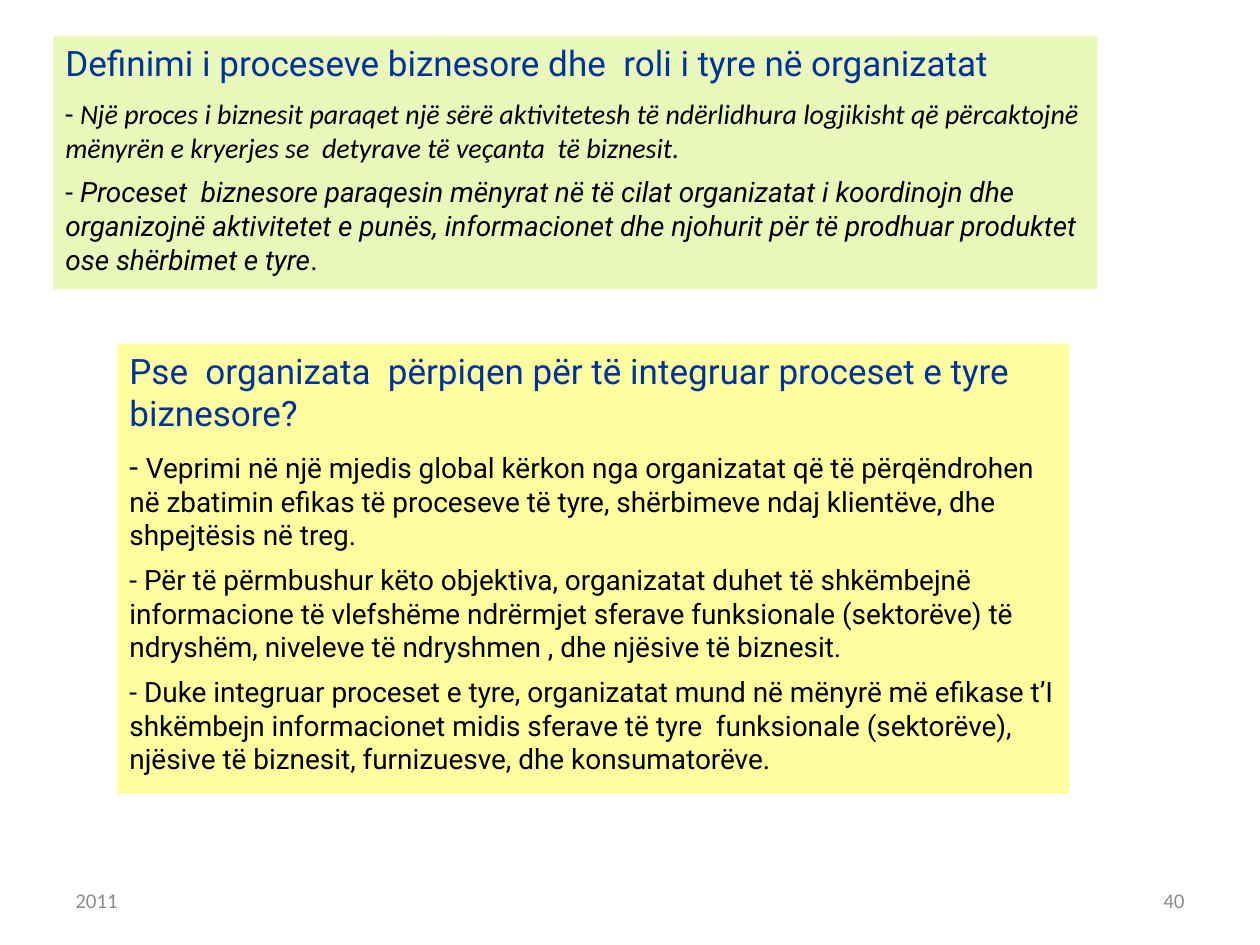
from pptx import Presentation
from pptx.dml.color import RGBColor
from pptx.enum.shapes import MSO_SHAPE
from pptx.enum.text import MSO_ANCHOR, MSO_AUTO_SIZE, PP_ALIGN
from pptx.util import Cm, Pt

RECTANGLE = MSO_SHAPE.RECTANGLE
TOP, MIDDLE = MSO_ANCHOR.TOP, MSO_ANCHOR.MIDDLE
GROW = MSO_AUTO_SIZE.SHAPE_TO_FIT_TEXT
LEFT, RIGHT = PP_ALIGN.LEFT, PP_ALIGN.RIGHT

COLOURS = {
    "heading": "003399",
    "body": "000000",
    "footer": "8C8C8C",
    "definition": "E9F8BA",
    "reasons": "FFFF9F",
}
FORMATS = {
    "heading": {"size": Pt(20), "name": "Roboto"},
    "body": {"size": Pt(16), "name": "Roboto"},
    "footer": {"size": Pt(12), "name": "Calibri"},
}
LARGE = {"size": Pt(18)}
ITALIC = {"italic": True}
CALIBRI = {"name": "Calibri"}
SPACING = 0.2  # share of the text size before and after each paragraph

DEFINITION = [
    ("heading", [("Definimi i proceseve biznesore dhe  roli i tyre në organizatat", {})]),
    ("body", [
        ("- ", {}),
        ("Një proces i biznesit paraqet një sërë aktivitetesh të ndërlidhura logjikisht "
         "që përcaktojnë mënyrën e kryerjes se  detyrave të veçanta  të biznesit.",
         CALIBRI | ITALIC),
    ]),
    ("body", [
        ("- ", {}),
        ("Proceset  biznesore paraqesin mënyrat në të cilat organizatat i koordinojn dhe  "
         "organizojnë aktivitetet e punës, informacionet dhe njohurit për të prodhuar "
         "produktet  ose shërbimet e tyre", ITALIC),
        (".", {}),
    ]),
]
REASONS = [
    ("heading", [("Pse  organizata  përpiqen për të integruar proceset e tyre biznesore?", {})]),
    ("body", [
        ("- ", LARGE),
        ("Veprimi në një mjedis global kërkon nga organizatat që të përqëndrohen në zbatimin "
         "efikas të proceseve të tyre, shërbimeve ndaj klientëve, dhe shpejtësis në treg.", {}),
    ]),
    ("body", [
        ("- Për të përmbushur këto objektiva, organizatat duhet të shkëmbejnë informacione "
         "të vlefshëme ndrërmjet sferave funksionale (sektorëve) të ndryshëm, niveleve të "
         "ndryshmen , dhe njësive të biznesit.", {}),
    ]),
    ("body", [
        ("- Duke integruar proceset e tyre, organizatat mund në mënyrë më efikase t’I "
         "shkëmbejn informacionet midis sferave të tyre  funksionale (sektorëve), njësive "
         "të biznesit, furnizuesve, dhe konsumatorëve.", {}),
    ]),
]


class SlideBuilder:
    def __init__(self, slide):
        self.slide = slide

    def add_run(self, paragraph, text, role, changes):
        run = paragraph.add_run()
        run.text = text
        for attribute, value in (FORMATS[role] | changes).items():
            setattr(run.font, attribute, value)
        run.font.color.rgb = RGBColor.from_string(COLOURS[role])

    def panel(self, colour, box, paragraphs):
        """Add a filled box; paragraphs are (role, [(text, format changes)])."""
        panel = self.slide.shapes.add_shape(RECTANGLE, *map(Cm, box))
        panel.shadow.inherit = False
        panel.fill.solid()
        panel.fill.fore_color.rgb = RGBColor.from_string(COLOURS[colour])
        panel.line.fill.background()
        frame = panel.text_frame
        frame.word_wrap = True
        frame.vertical_anchor = TOP
        frame.auto_size = GROW
        for index, (role, runs) in enumerate(paragraphs):
            paragraph = frame.add_paragraph() if index else frame.paragraphs[0]
            paragraph.alignment = LEFT
            gap = Pt(FORMATS[role]["size"].pt * SPACING)
            paragraph.space_before = paragraph.space_after = gap
            for text, changes in runs:
                self.add_run(paragraph, text, role, changes)

    def footer(self, text, left, alignment):
        footer = self.slide.shapes.add_textbox(Cm(left), Cm(17.65), Cm(5.93), Cm(1.01))
        frame = footer.text_frame
        frame.word_wrap = True
        frame.vertical_anchor = MIDDLE
        paragraph = frame.paragraphs[0]
        paragraph.alignment = alignment
        self.add_run(paragraph, text, "footer", {})


def main():
    presentation = Presentation()
    presentation.slide_width, presentation.slide_height = Cm(25.4), Cm(19.05)
    builder = SlideBuilder(presentation.slides.add_slide(presentation.slide_layouts[6]))
    builder.footer("2011", 1.27, LEFT)
    builder.footer("40", 18.2, RIGHT)
    builder.panel("definition", (1.07, 0.72, 21.05, 5.11), DEFINITION)
    builder.panel("reasons", (2.36, 6.93, 19.2, 9.07), REASONS)
    presentation.save("out.pptx")


if __name__ == "__main__":
    main()
